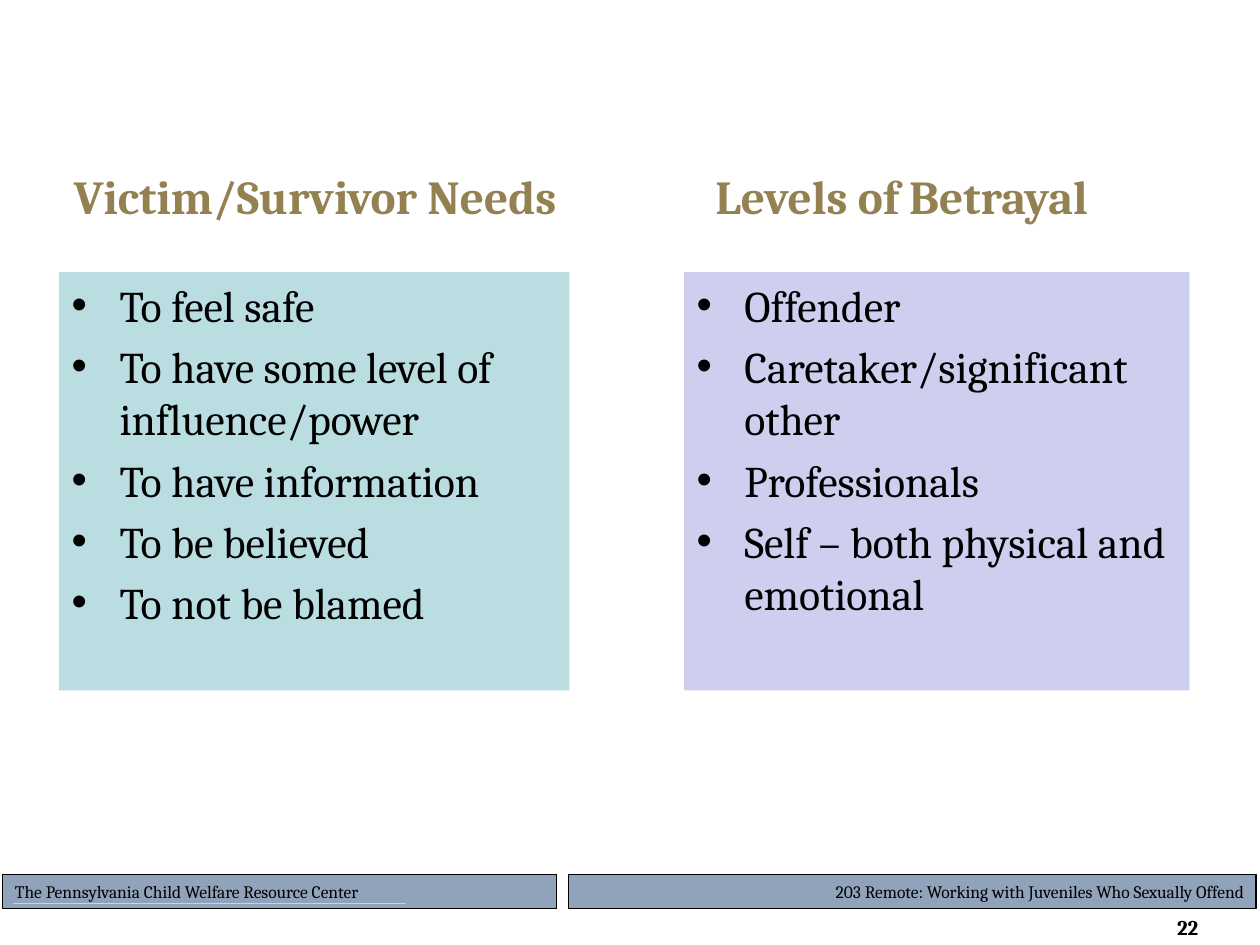
from lxml.etree import SubElement
from pptx import Presentation
from pptx.dml.color import RGBColor
from pptx.enum.shapes import MSO_CONNECTOR, MSO_SHAPE
from pptx.enum.text import MSO_ANCHOR, PP_ALIGN
from pptx.oxml.ns import qn
from pptx.util import Pt

EMU_PER_PX = 9144
FONT = "Cambria"
COLORS = {
    "text": "000000",
    "heading": "948151",
    "needs": "BADDE1",
    "betrayal": "CECEEF",
    "footer": "91A3BB",
    "rule": "E5D199",
}


class SlideBuilder:
    def __init__(self, page):
        self.page = page

    def px(self, *lengths):
        return [length * EMU_PER_PX for length in lengths]

    def color(self, name):
        return RGBColor.from_string(COLORS[name])

    def style(self, para, size, color="text", bold=False):
        para.font.name = FONT
        para.font.size = Pt(size)
        para.font.bold = bold
        para.font.color.rgb = self.color(color)

    def text(self, bounds, words, size, color="text", align=PP_ALIGN.LEFT,
             anchor=MSO_ANCHOR.TOP, right_inset=10):
        frame = self.page.shapes.add_textbox(*self.px(*bounds)).text_frame
        frame.word_wrap = True
        frame.vertical_anchor = anchor
        frame.margin_right = self.px(right_inset)[0]
        para = frame.paragraphs[0]
        para.text = words
        para.alignment = align
        self.style(para, size, color, bold=True)

    def panel(self, bounds, fill, line_width=0):
        box = self.page.shapes.add_shape(MSO_SHAPE.RECTANGLE, *self.px(*bounds))
        box.shadow.inherit = False
        box.fill.solid()
        box.fill.fore_color.rgb = self.color(fill)
        if line_width:
            box.line.color.rgb = self.color("text")
            box.line.width = Pt(line_width)
        else:
            box.line.fill.background()
        box.text_frame.word_wrap = True
        box.text_frame.vertical_anchor = MSO_ANCHOR.TOP
        return box.text_frame

    def footer(self, bounds, words, align, line_width):
        para = self.panel(bounds, "footer", line_width).paragraphs[0]
        para.text = words
        para.alignment = align
        self.style(para, 10)

    def bullets(self, bounds, fill, items):
        frame = self.panel(bounds, fill)
        indent = self.px(38)[0]
        for index, item in enumerate(items):
            para = frame.add_paragraph() if index else frame.paragraphs[0]
            para.text = item
            para.alignment = PP_ALIGN.LEFT
            if index:
                para.space_before = Pt(5)
            properties = para._p.get_or_add_pPr()
            properties.set("marL", str(indent))
            properties.set("indent", str(-indent))
            SubElement(properties, qn("a:buFont")).set("typeface", "Arial")
            SubElement(properties, qn("a:buChar")).set("char", "•")
            self.style(para, 25)

    def rule(self, ends, color, width):
        line = self.page.shapes.add_connector(MSO_CONNECTOR.STRAIGHT, *self.px(*ends))
        line.line.color.rgb = self.color(color)
        line.line.width = Pt(width)
        SubElement(line._element.spPr, qn("a:effectLst"))


def main():
    deck = Presentation()
    deck.slide_width, deck.slide_height = 1000 * EMU_PER_PX, 750 * EMU_PER_PX
    builder = SlideBuilder(deck.slides.add_slide(deck.slide_layouts[6]))

    builder.footer((451, 694, 546, 27),
                   "203 Remote: Working with Juveniles Who Sexually Offend",
                   PP_ALIGN.RIGHT, 0.75)
    builder.footer((2, 694, 440, 27),
                   "The Pennsylvania Child Welfare Resource Center",
                   PP_ALIGN.LEFT, 0.5)
    builder.rule((10, 717, 322, 717), "rule", 0.75)
    builder.text((881, 721, 95, 30), "22", 12, align=PP_ALIGN.RIGHT, right_inset=25)

    builder.text((13, 123, 474, 65), "Victim/Survivor Needs", 27, "heading",
                 PP_ALIGN.CENTER, MSO_ANCHOR.MIDDLE)
    builder.bullets((47, 216, 405, 332), "needs", [
        "To feel safe",
        "To have some level of influence/power",
        "To have information",
        "To be believed",
        "To not be blamed",
    ])
    builder.text((558, 123, 370, 65), "Levels of Betrayal", 27, "heading",
                 anchor=MSO_ANCHOR.MIDDLE)
    builder.bullets((543, 216, 401, 332), "betrayal", [
        "Offender",
        "Caretaker/significant other",
        "Professionals",
        "Self – both physical and emotional",
    ])
    deck.save("out.pptx")


if __name__ == "__main__":
    main()
